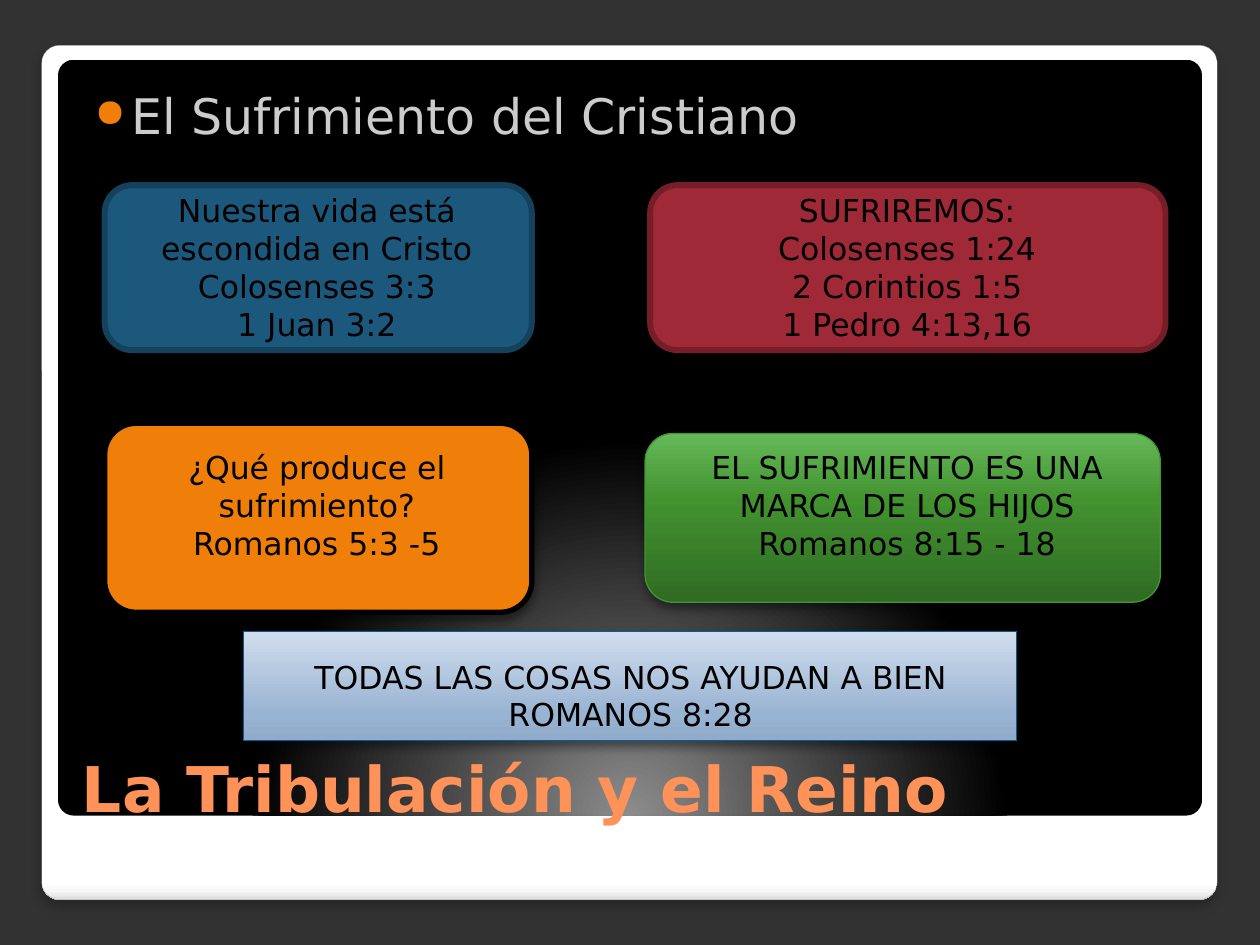
"""Builds the slide on tribulation and the Kingdom with its five scripture cards."""
from pptx import Presentation
from pptx.dml.color import RGBColor as RGB
from pptx.enum.shapes import MSO_SHAPE as Preset
from pptx.enum.text import MSO_ANCHOR as Anchor, MSO_AUTO_SIZE as AutoSize, PP_ALIGN as Align
from pptx.oxml import parse_xml
from pptx.oxml.ns import nsdecls, qn
from pptx.util import Pt

TITLE = "La Tribulación y el Reino"
TOPIC = "El Sufrimiento del Cristiano"

THEME = {
    "font": "DejaVu Sans",
    "backdrop": "323232",
    "shadow": "000000",
    "bullet": "F07F09",
    "title": {"size": 36, "color": "FF9258", "bold": True},
    "topic": {"size": 28, "color": "CCCCCC", "bold": False},
    "card": {"size": 18, "color": "000000", "bold": False},
    "frame": {"fill": [(0, "FFFFFF"), (98, "FFFFFF"), (99, "F7F7F7"), (100, "DADADA")],
              "angle": 90, "line": ("A4A4A4", 0.16), "shadow": (25, 6, 4)},
    "stage": {"fill": [(0, "8C8C8C"), (55, "000000"), (100, "000000")]},
    "blue": {"fill": "1B587C", "line": ("14415C", 3.35)},
    "red": {"fill": "9F2936", "line": ("761E28", 3.35)},
    "orange": {"fill": "F07F09", "line": ("000000", 3), "shadow": (40, 5.2, 3)},
    "green": {"fill": [(0, "2F6B22"), (60, "429230"), (100, "66B959")],
              "angle": 270, "line": ("439631", 0.75), "shadow": (40, 5.2, 3)},
    "sky": {"fill": [(0, "90ABCB"), (25, "99B3D2"), (100, "D1DEEE")],
            "angle": 270, "line": ("035E94", 0.75), "shadow": (40, 5.2, 3)},
}

PANELS = [("frame", (23.8, 25.9, 671.8, 488.2)), ("stage", (33.1, 34.1, 653.8, 432))]
PANEL_CORNER = 0.021
TITLE_BOX = (39.6, 392.4, 644.4, 82.8)
TOPIC_BOX = (39.6, 41.8, 644.4, 64.1)
TOPIC_INSETS = {"margin_left": Pt(14.4), "margin_top": Pt(7.2),
                "margin_right": Pt(7.2), "margin_bottom": Pt(3.6)}
TOPIC_INDENT = 21

LEFT_TEXT, RIGHT_TEXT = (76.3, 209.5), (382.3, 272.2)
TOP_TEXT, MIDDLE_TEXT = (105.8, 94.3), (252.7, 72.7)
CARDS = [
    ("blue", Preset.ROUNDED_RECTANGLE, (59.8, 105.8, 244.1, 94.3), LEFT_TEXT, TOP_TEXT,
     ["Nuestra vida está escondida en Cristo", "Colosenses 3:3", "1 Juan 3:2"]),
    ("red", Preset.ROUNDED_RECTANGLE, (371.5, 105.8, 294.5, 94.3), RIGHT_TEXT, TOP_TEXT,
     ["SUFRIREMOS:", "Colosenses 1:24", "2 Corintios 1:5", "1 Pedro 4:13,16"]),
    ("orange", Preset.ROUNDED_RECTANGLE, (59.8, 241.9, 244.1, 108), LEFT_TEXT, MIDDLE_TEXT,
     ["¿Qué produce el sufrimiento?", "Romanos 5:3 -5"]),
    ("green", Preset.ROUNDED_RECTANGLE, (368.6, 247.7, 294.5, 96.5), RIGHT_TEXT, MIDDLE_TEXT,
     ["EL SUFRIMIENTO ES UNA MARCA DE LOS HIJOS", "Romanos 8:15 - 18"]),
    ("sky", Preset.RECTANGLE, (139, 360.7, 442.1, 62.6), (150.5, 419.8), (372.2, 51.1),
     ["TODAS LAS COSAS NOS AYUDAN A BIEN", "ROMANOS 8:28"]),
]


def set_all(target, values):
    for name, value in values.items():
        setattr(target, name, value)


def points(box):
    return [Pt(length) for length in box]


def apply_gradient(shape, stops, angle):
    shape.fill.gradient()
    properties = shape.element.spPr
    stop_xml = "".join(f'<a:gs pos="{position * 1000}"><a:srgbClr val="{color}"/></a:gs>'
                       for position, color in stops)
    if angle is None:
        direction = ('<a:path path="circle"><a:fillToRect l="50000" t="175000" '
                     'r="50000" b="-75000"/></a:path>')
    else:
        direction = f'<a:lin ang="{angle * 60000}" scaled="0"/>'
    gradient = parse_xml(f'<a:gradFill {nsdecls("a")} rotWithShape="1">'
                         f'<a:gsLst>{stop_xml}</a:gsLst>{direction}</a:gradFill>')
    properties.replace(properties.find(qn("a:gradFill")), gradient)


def apply_shadow(shape, opacity, blur, distance):
    shape.element.spPr.find(qn("a:effectLst")).append(parse_xml(
        f'<a:outerShdw {nsdecls("a")} blurRad="{Pt(blur)}" dist="{Pt(distance)}" '
        f'dir="5400000" rotWithShape="0"><a:srgbClr val="{THEME["shadow"]}">'
        f'<a:alpha val="{opacity * 1000}"/></a:srgbClr></a:outerShdw>'))


def add_block(slide, preset, box, style):
    block = slide.shapes.add_shape(preset, *points(box))
    block.shadow.inherit = False
    if isinstance(style["fill"], str):
        block.fill.solid()
        block.fill.fore_color.rgb = RGB.from_string(style["fill"])
    else:
        apply_gradient(block, style["fill"], style.get("angle"))
    if "line" in style:
        color, width = style["line"]
        block.line.color.rgb = RGB.from_string(color)
        block.line.width = Pt(width)
    else:
        block.line.fill.background()
    if "shadow" in style:
        apply_shadow(block, *style["shadow"])
    return block


def write(frame, lines, style, align, **frame_format):
    set_all(frame, {"word_wrap": True, **frame_format})
    for index, line in enumerate(lines):
        paragraph = frame.add_paragraph() if index else frame.paragraphs[0]
        paragraph.alignment = align
        run = paragraph.add_run()
        run.text = line
        set_all(run.font, {"name": THEME["font"], "size": Pt(style["size"]),
                           "bold": style["bold"]})
        run.font.color.rgb = RGB.from_string(style["color"])


def add_bullet(paragraph):
    paragraph.space_before = Pt(2.5)
    properties = paragraph._p.get_or_add_pPr()
    properties.set("marL", str(Pt(TOPIC_INDENT)))
    properties.set("indent", str(-Pt(TOPIC_INDENT)))
    for bullet in (f'<a:buClr {nsdecls("a")}><a:srgbClr val="{THEME["bullet"]}"/></a:buClr>',
                   f'<a:buSzPct {nsdecls("a")} val="80000"/>',
                   f'<a:buChar {nsdecls("a")} char="●"/>'):
        properties.append(parse_xml(bullet))


def main():
    deck = Presentation()
    set_all(deck, {"slide_width": Pt(720), "slide_height": Pt(540)})
    slide = deck.slides.add_slide(deck.slide_layouts[5])
    slide.background.fill.solid()
    slide.background.fill.fore_color.rgb = RGB.from_string(THEME["backdrop"])

    title = slide.shapes.title
    set_all(title, dict(zip(("left", "top", "width", "height"), points(TITLE_BOX))))
    write(title.text_frame, [TITLE], THEME["title"], Align.LEFT,
          vertical_anchor=Anchor.BOTTOM, auto_size=AutoSize.NONE)
    for name, box in PANELS:
        panel = add_block(slide, Preset.ROUNDED_RECTANGLE, box, THEME[name])
        panel.adjustments[0] = PANEL_CORNER
        title.element.addprevious(panel.element)

    topic = slide.shapes.add_textbox(*points(TOPIC_BOX)).text_frame
    write(topic, [TOPIC], THEME["topic"], Align.LEFT, **TOPIC_INSETS)
    add_bullet(topic.paragraphs[0])

    for name, preset, box, (left, width), (top, height), lines in CARDS:
        add_block(slide, preset, box, THEME[name])
        caption = slide.shapes.add_textbox(*points((left, top, width, height)))
        write(caption.text_frame, lines, THEME["card"], Align.CENTER,
              auto_size=AutoSize.SHAPE_TO_FIT_TEXT)

    deck.save("out.pptx")


if __name__ == "__main__":
    main()
